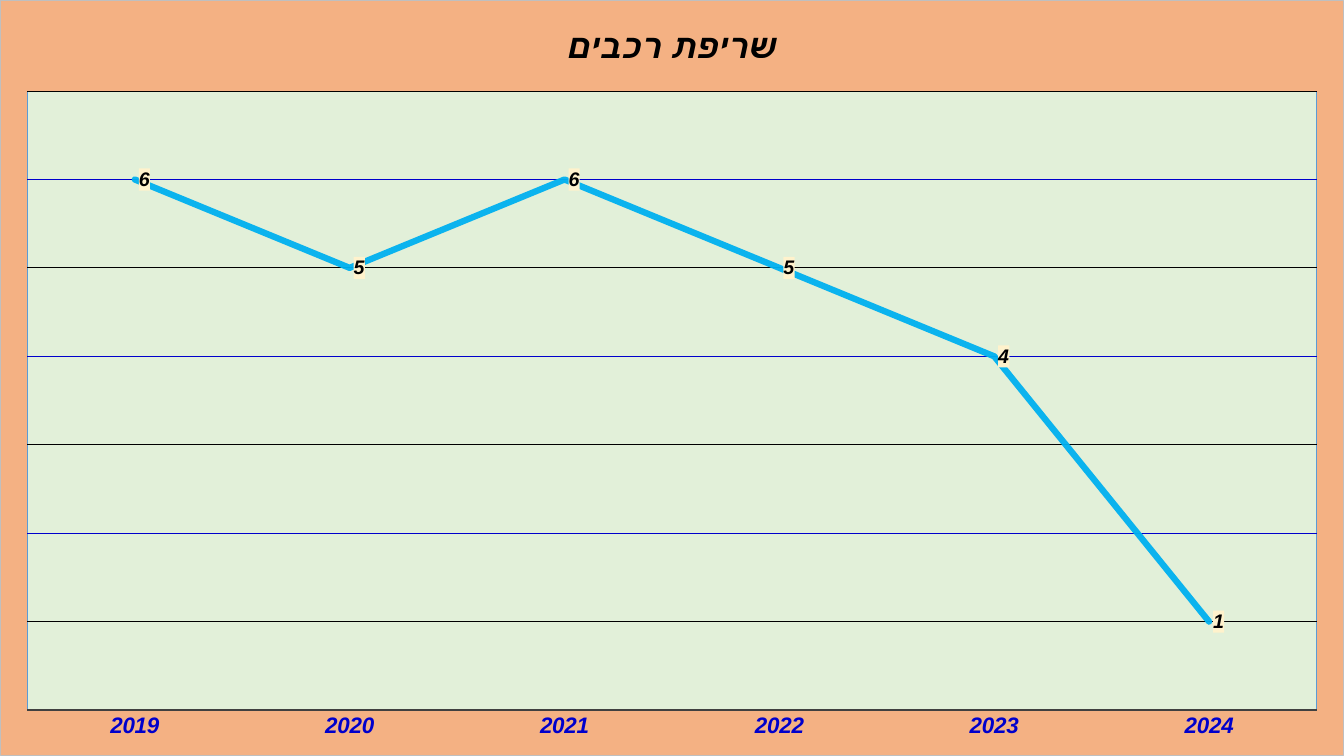
"""Build a one-slide deck with a line chart of vehicle arsons per year."""
from lxml.etree import SubElement
from pptx import Presentation
from pptx.chart.data import CategoryChartData
from pptx.dml.color import RGBColor
from pptx.enum.chart import XL_CHART_TYPE, XL_LABEL_POSITION, XL_MARKER_STYLE, XL_TICK_MARK
from pptx.oxml import parse_xml
from pptx.oxml.ns import qn
from pptx.util import Pt

TITLE = "שריפת רכבים"
ARSONS = {"2019": 6, "2020": 5, "2021": 6, "2022": 5, "2023": 4, "2024": 1}
WIDTH, HEIGHT = 960, 540
PLOT_AREA = {"x": 0.02, "y": 0.12, "w": 0.96, "h": 0.82}
COLORS = {
    "frame": "F4B183",
    "frame_edge": "BFBFBF",
    "plot": "E2F0D9",
    "plot_edge": "5B9BD5",
    "label": "FFF2CC",
    "series": "00B0F0",
    "blue": "0000CC",
    "axis": "404040",
    "black": "000000",
}
NAMESPACES = (
    'xmlns:c="http://schemas.openxmlformats.org/drawingml/2006/chart" '
    'xmlns:a="http://schemas.openxmlformats.org/drawingml/2006/main"'
)


def color(name):
    return RGBColor.from_string(COLORS[name])


def style_font(font, size, name):
    font.name = "Arial"
    font.size = Pt(size)
    font.bold = font.italic = True
    font.color.rgb = color(name)


def style_line(line, name, width):
    line.color.rgb = color(name)
    line.width = Pt(width)


def paint(name):
    if name is None:
        return "<a:noFill/>"
    return f'<a:solidFill><a:srgbClr val="{COLORS[name]}"/></a:solidFill>'


def area_format(fill=None, edge=None):
    return parse_xml(
        f'<c:spPr {NAMESPACES}>{paint(fill)}'
        f'<a:ln w="{Pt(0.75)}">{paint(edge)}</a:ln></c:spPr>'
    )


def place_plot(plot_area):
    for layout in plot_area.findall(qn("c:layout")):
        plot_area.remove(layout)
    sizes = "".join(f'<c:{key} val="{value}"/>' for key, value in PLOT_AREA.items())
    plot_area.insert(0, parse_xml(
        f'<c:layout {NAMESPACES}><c:manualLayout><c:layoutTarget val="inner"/>'
        f'<c:xMode val="edge"/><c:yMode val="edge"/>{sizes}</c:manualLayout></c:layout>'
    ))
    plot_area.append(area_format("plot", "plot_edge"))


def style_axes(chart):
    years = chart.category_axis
    years.major_tick_mark = years.minor_tick_mark = XL_TICK_MARK.NONE
    style_font(years.tick_labels.font, 16, "blue")
    style_line(years.format.line, "axis", 1.5)
    counts = chart.value_axis
    counts.minimum_scale, counts.maximum_scale = 0, 7
    counts.major_unit, counts.minor_unit = 2, 1
    counts.has_major_gridlines = counts.has_minor_gridlines = True
    style_line(counts.major_gridlines.format.line, "blue", 0.75)
    counts._element.find(qn("c:minorGridlines")).append(area_format(edge="black"))
    counts.visible = False


def style_series(series):
    series.smooth = False
    series.marker.style = XL_MARKER_STYLE.NONE
    style_line(series.format.line, "series", 4.5)
    outline = series._element.find(qn("c:spPr")).find(qn("a:ln"))
    outline.set("cap", "rnd")
    SubElement(outline.find(".//" + qn("a:srgbClr")), qn("a:alpha"), val="94000")
    labels = series.data_labels
    labels.show_value = True
    labels.position = XL_LABEL_POSITION.RIGHT
    style_font(labels.font, 14, "black")
    labels._element.find(qn("c:txPr")).addprevious(area_format("label"))


def main():
    deck = Presentation()
    deck.slide_width, deck.slide_height = Pt(WIDTH), Pt(HEIGHT)
    page = deck.slides.add_slide(deck.slide_layouts[6])
    data = CategoryChartData()
    data.categories = list(ARSONS)
    data.add_series(TITLE, list(ARSONS.values()))
    chart = page.shapes.add_chart(
        XL_CHART_TYPE.LINE, 0, 0, Pt(WIDTH), Pt(HEIGHT), data
    ).chart
    chart.font.name = "Calibri"
    chart.font.size = Pt(10)
    chart.font.color.rgb = color("black")
    chart.has_legend = False
    chart.has_title = True
    heading = chart.chart_title.text_frame
    heading.text = TITLE
    style_font(heading.paragraphs[0].font, 24, "black")
    chart.plots[0].vary_by_categories = False
    style_axes(chart)
    style_series(chart.plots[0].series[0])
    space = chart._chartSpace
    space.find(qn("c:txPr")).addprevious(area_format("frame", "frame_edge"))
    place_plot(space.find(".//" + qn("c:plotArea")))
    deck.save("out.pptx")


if __name__ == "__main__":
    main()
